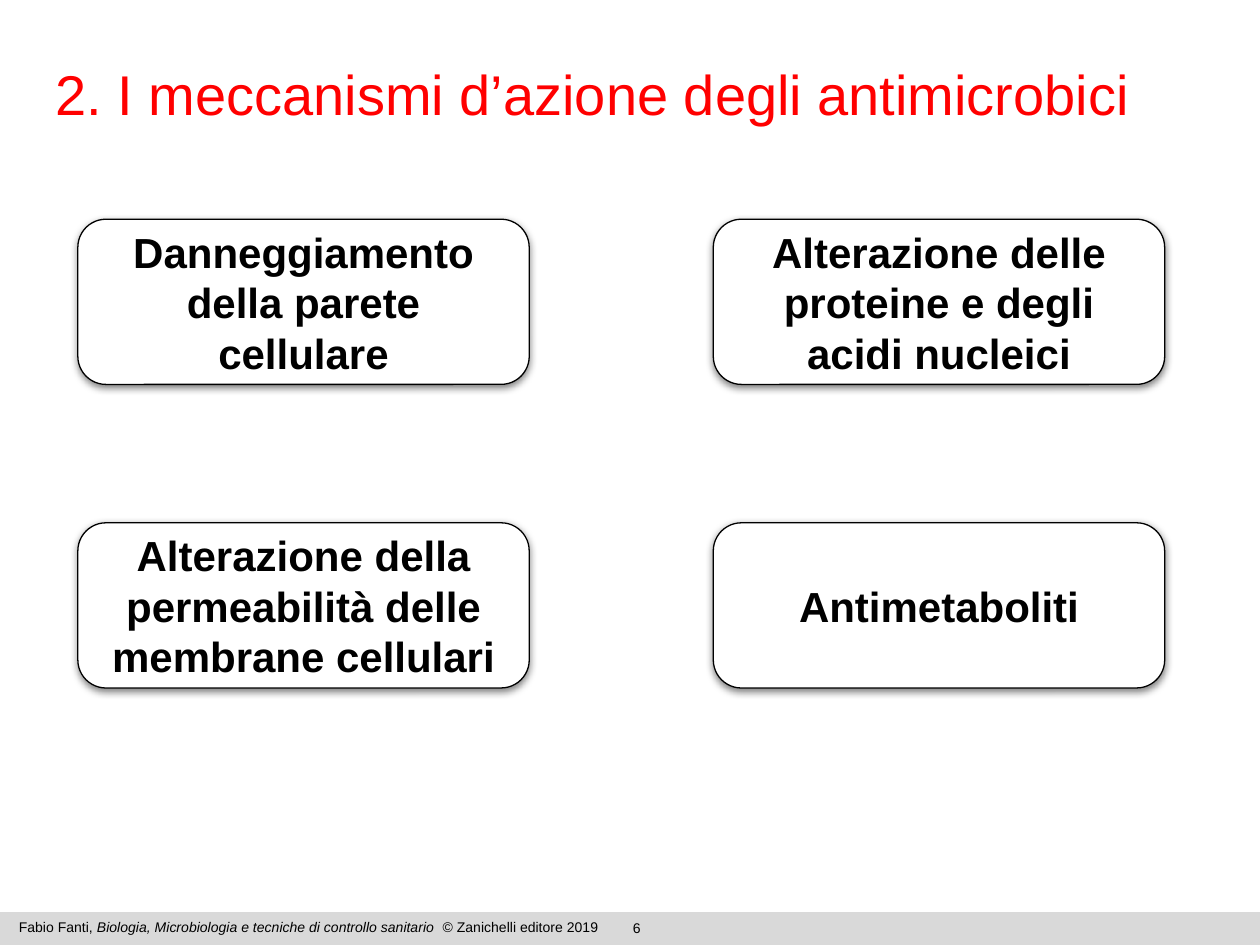
from lxml import etree
from pptx import Presentation
from pptx import util as u
from pptx.dml import color
from pptx.enum import shapes, text
from pptx.oxml import ns

MECHANISMS = [
    ["Danneggiamento della parete cellulare",
     "Alterazione delle proteine e degli acidi nucleici"],
    ["Alterazione della permeabilità delle membrane cellulari",
     "Antimetaboliti"],
]


def rgb(value):
    return color.RGBColor.from_string(value)


def write_text(shape, *runs, size, ink="000000", bold=False,
               align=text.PP_ALIGN.LEFT, anchor=text.MSO_ANCHOR.TOP,
               margins=(0.25, 0.13)):
    frame = shape.text_frame
    frame.word_wrap = True
    frame.vertical_anchor = anchor
    frame.margin_left = frame.margin_right = u.Cm(margins[0])
    frame.margin_top = frame.margin_bottom = u.Cm(margins[1])
    paragraph = frame.paragraphs[0]
    paragraph.alignment = align
    for content, italic in runs:
        run = paragraph.add_run()
        run.text = content
        run.font.name = "Arial"
        run.font.size = u.Pt(size)
        run.font.bold = bold
        run.font.italic = italic
        run.font.color.rgb = rgb(ink)


def add_box(slide, kind, left, top, width, height, fill, line=None):
    shape = slide.shapes.add_shape(
        kind, u.Cm(left), u.Cm(top), u.Cm(width), u.Cm(height))
    shape.shadow.inherit = False
    shape.fill.solid()
    shape.fill.fore_color.rgb = rgb(fill)
    if line:
        shape.line.color.rgb = rgb(line)
        shape.line.width = u.Pt(0.75)
    else:
        shape.line.fill.background()
    return shape


def add_label(slide, left, top, width, height, *runs, **text_format):
    box = slide.shapes.add_textbox(
        u.Cm(left), u.Cm(top), u.Cm(width), u.Cm(height))
    write_text(box, *runs, **text_format)


def cast_shadow(shape):
    effects = shape.element.spPr.find(ns.qn("a:effectLst"))
    shadow = etree.SubElement(
        effects, ns.qn("a:outerShdw"), blurRad=str(u.Pt(4.5)),
        dist=str(u.Pt(1.5)), dir="5400000", rotWithShape="0")
    tint = etree.SubElement(shadow, ns.qn("a:srgbClr"), val="000000")
    etree.SubElement(tint, ns.qn("a:alpha"), val="50000")


def add_footer(slide):
    add_box(slide, shapes.MSO_SHAPE.RECTANGLE, 0, 18.39, 25.4, 0.66, "D9D9D9")
    add_label(slide, 10.01, 18.41, 5.66, 0.43, ("6", False),
              size=8, align=text.PP_ALIGN.CENTER)
    add_label(slide, 0.13, 18.39, 12.8, 0.61,
              ("Fabio Fanti, ", False),
              ("Biologia, Microbiologia e tecniche di controllo sanitario", True),
              ("  © Zanichelli editore 2019", False), size=8)


def add_title(slide):
    title = add_box(slide, shapes.MSO_SHAPE.RECTANGLE,
                    0.89, 1.07, 24.51, 2.46, "FFFFFF", "FFFFFF")
    write_text(title, ("2. I meccanismi d’azione degli antimicrobici", False),
               size=32, ink="FF0000", margins=(0.23, 0.13))


def add_mechanism(slide, left, top, name):
    card = add_box(slide, shapes.MSO_SHAPE.ROUNDED_RECTANGLE,
                   left, top, 9.1, 3.33, "FFFFFF", "000000")
    card.adjustments[0] = 0.17
    cast_shadow(card)
    write_text(card, (name, False), size=24, bold=True,
               align=text.PP_ALIGN.CENTER, anchor=text.MSO_ANCHOR.MIDDLE,
               margins=(0.25, 0.25))


def main():
    presentation = Presentation()
    presentation.slide_width = u.Cm(25.4)
    presentation.slide_height = u.Cm(19.05)
    slide = presentation.slides.add_slide(presentation.slide_layouts[6])
    add_footer(slide)
    add_title(slide)
    for row, names in enumerate(MECHANISMS):
        for column, name in enumerate(names):
            add_mechanism(slide, 1.57 + column * 12.81, 4.42 + row * 6.12, name)
    presentation.save("out.pptx")


if __name__ == "__main__":
    main()
